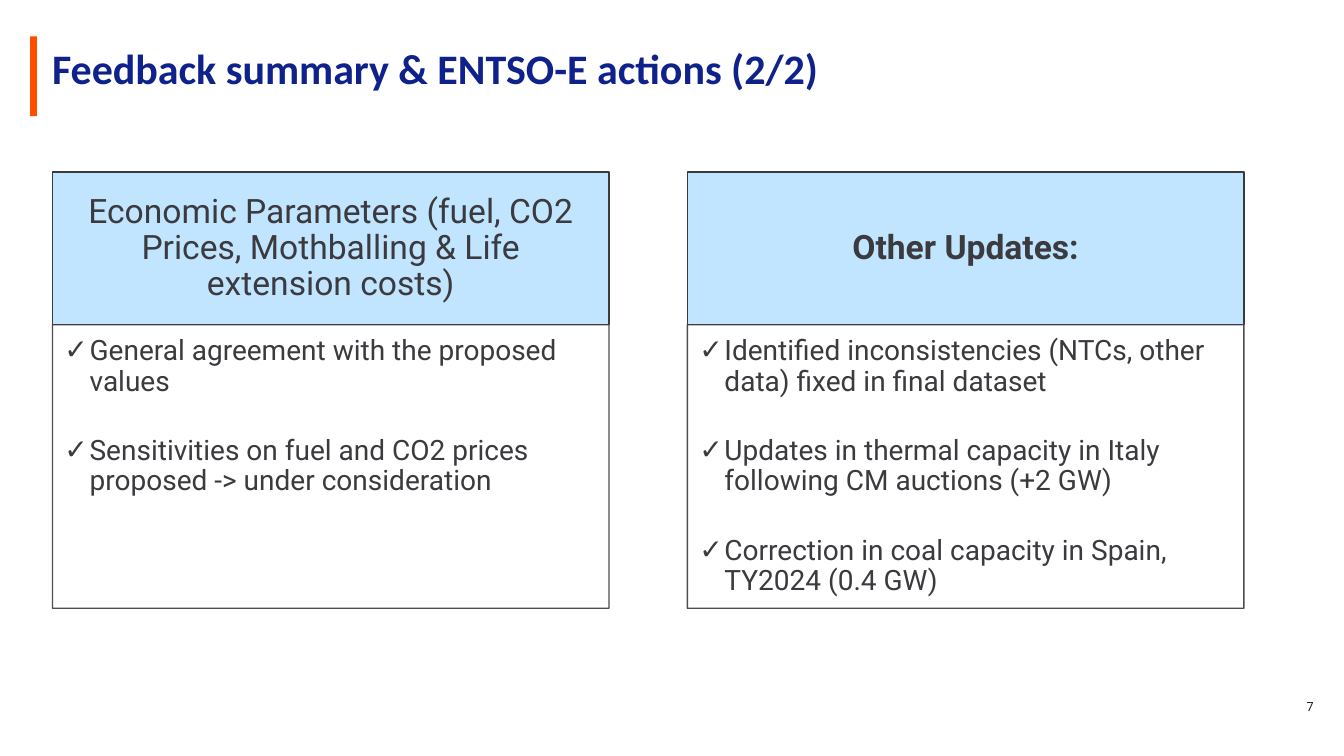
from pptx import Presentation
from pptx.dml.color import RGBColor
from pptx.enum.shapes import MSO_SHAPE as Shape
from pptx.enum.text import MSO_ANCHOR as Anchor, MSO_AUTO_SIZE as AutoSize, PP_ALIGN as Align
from pptx.oxml.ns import qn
from pptx.oxml.xmlchemy import OxmlElement
from pptx.util import Pt

TITLE = "Feedback summary & ENTSO-E actions (2/2)"
PAGE_NUMBER = "7"
PANELS = [
    {
        "heading": "Economic Parameters (fuel, CO2 Prices, Mothballing & Life extension costs)",
        "bold": False,
        "points": [
            "General agreement with the proposed values",
            "Sensitivities on fuel and CO2 prices proposed -> under consideration",
        ],
    },
    {
        "heading": "Other Updates:",
        "bold": True,
        "points": [
            "Identified inconsistencies (NTCs, other data) fixed in final dataset",
            "Updates in thermal capacity in Italy following CM auctions (+2 GW)",
            "Correction in coal capacity in Spain, TY2024 (0.4 GW)",
        ],
    },
]

ORANGE, NAVY, SKY, WHITE = "FF4D00", "0F218B", "C1E5FF", "FFFFFF"
CHARCOAL, INK = "3A3A3F", "1D1D20"

PANEL_LEFT, PANEL_TOP, PANEL_WIDTH, PANEL_STEP = 37.5, 123, 397.5, 453.5
HEADING_HEIGHT, LIST_HEIGHT = 109, 202.5
BULLET_INDENT, POINT_GAP = 18, 28

TITLE_FONT = {"name": "Calibri", "size": Pt(30), "bold": True}
HEADING_FONT = {"name": "Roboto", "size": Pt(24)}
POINT_FONT = {"name": "Roboto", "size": Pt(20), "bold": False}
PAGE_FONT = {"name": "Roboto", "size": Pt(9)}


def color(value):
    return RGBColor.from_string(value)


def apply(target, values):
    for name, value in values.items():
        setattr(target, name, value)


def place(shape, left, top, width, height):
    apply(shape, {"left": Pt(left), "top": Pt(top), "width": Pt(width), "height": Pt(height)})


def set_frame(shape, anchor, margins):
    frame = shape.text_frame
    sides = ("margin_left", "margin_top", "margin_right", "margin_bottom")
    apply(frame, dict(zip(sides, map(Pt, margins))))
    apply(frame, {"word_wrap": True, "auto_size": AutoSize.NONE, "vertical_anchor": anchor})
    return frame


def write(paragraph, text, font, font_color, **layout):
    paragraph.text = text
    apply(paragraph, {"space_before": Pt(0), "space_after": Pt(0), **layout})
    apply(paragraph.font, font)
    paragraph.font.color.rgb = color(font_color)


def paint(shape, fill, opacity=100):
    shape.fill.solid()
    shape.fill.fore_color.rgb = color(fill)
    shape.line.color.rgb = color(CHARCOAL)
    shape.line.width = Pt(1)
    if opacity < 100:
        for shade in shape._element.spPr.iter(qn("a:srgbClr")):
            alpha = OxmlElement("a:alpha")
            alpha.set("val", str(opacity * 1000))
            shade.append(alpha)


def add_check_mark(paragraph):
    properties = paragraph._p.get_or_add_pPr()
    properties.set("marL", str(Pt(BULLET_INDENT)))
    properties.set("indent", str(-Pt(BULLET_INDENT)))
    bullet = OxmlElement("a:buChar")
    bullet.set("char", "✓")
    properties.append(bullet)


def fill_panel(index, panel, heading, body):
    left = PANEL_LEFT + index * PANEL_STEP
    place(heading, left, PANEL_TOP, PANEL_WIDTH, HEADING_HEIGHT)
    paint(heading, SKY)
    frame = set_frame(heading, Anchor.MIDDLE, (13.5, 8, 13.5, 8))
    write(frame.paragraphs[0], panel["heading"], {**HEADING_FONT, "bold": panel["bold"]},
          CHARCOAL, alignment=Align.CENTER, line_spacing=0.9)

    place(body, left, PANEL_TOP + HEADING_HEIGHT, PANEL_WIDTH, LIST_HEIGHT)
    paint(body, WHITE, 90)
    frame = set_frame(body, Anchor.TOP, (8.5, 8.5, 11.5, 12))
    for number, point in enumerate(panel["points"]):
        paragraph = frame.add_paragraph() if number else frame.paragraphs[0]
        add_check_mark(paragraph)
        write(paragraph, point, POINT_FONT, CHARCOAL, line_spacing=0.9,
              space_before=Pt(POINT_GAP if number else 0))


def main():
    presentation = Presentation()
    apply(presentation, {"slide_width": Pt(960), "slide_height": Pt(540)})
    slide = presentation.slides.add_slide(presentation.slide_layouts.get_by_name("Comparison"))

    bar = slide.shapes.add_shape(Shape.RECTANGLE, Pt(21.5), Pt(26), Pt(5), Pt(57))
    bar.shadow.inherit = False
    bar.fill.solid()
    bar.fill.fore_color.rgb = color(ORANGE)
    bar.line.fill.background()

    title, *panel_parts = slide.placeholders
    place(title, 30, 36.5, 915, 28)
    frame = set_frame(title, Anchor.MIDDLE, (7.2, 3.6, 7.2, 3.6))
    write(frame.paragraphs[0], TITLE, TITLE_FONT, NAVY,
          alignment=Align.LEFT, line_spacing=Pt(32))

    for index, panel in enumerate(PANELS):
        heading, body = panel_parts[2 * index:2 * index + 2]
        fill_panel(index, panel, heading, body)

    page = slide.shapes.add_textbox(Pt(486), Pt(491), Pt(459.5), Pt(29))
    frame = set_frame(page, Anchor.MIDDLE, (7.2, 3.6, 7.2, 3.6))
    write(frame.paragraphs[0], PAGE_NUMBER, PAGE_FONT, INK,
          alignment=Align.RIGHT, line_spacing=Pt(9))

    presentation.save("out.pptx")


if __name__ == "__main__":
    main()
